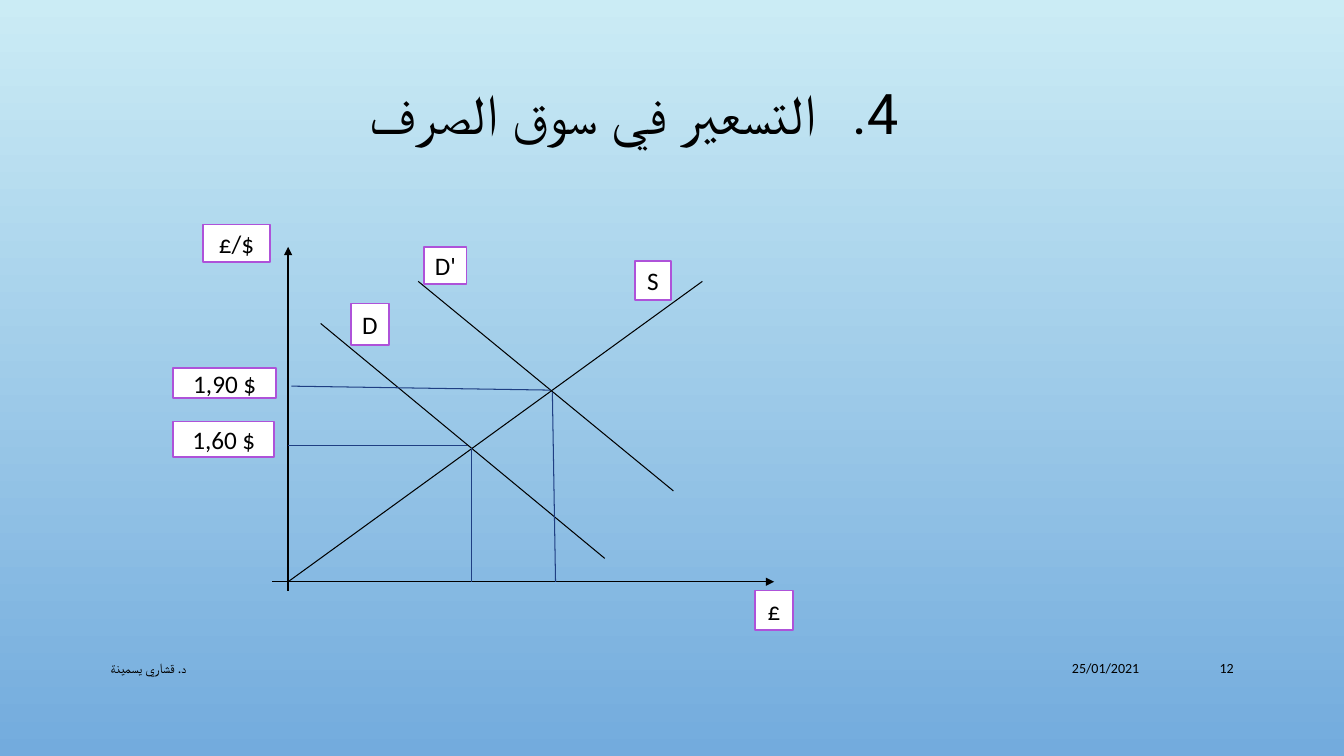
from lxml.etree import SubElement
from pptx import Presentation
from pptx.dml.color import RGBColor
from pptx.enum.dml import MSO_LINE
from pptx.enum.shapes import MSO_CONNECTOR, MSO_SHAPE
from pptx.enum.text import MSO_ANCHOR, PP_ALIGN
from pptx.oxml.ns import qn
from pptx.util import Cm, Pt


def color(value):
    return RGBColor.from_string(value)


class MarketSlide:
    ink, guide, border, paper = "000000", "1F3F83", "AE52D9", "FFFFFF"
    body_font, title_font = "Calibri", "Roboto"

    def __init__(self, presentation):
        self.slide = presentation.slides.add_slide(presentation.slide_layouts[6])

    def background(self, top, bottom):
        fill = self.slide.background.fill
        fill.gradient()
        fill.gradient_angle = 270
        for stop, value, position in zip(fill.gradient_stops, (top, bottom), (0, 1)):
            stop.color.rgb = color(value)
            stop.position = position

    def fill_frame(self, frame, text, size, align, font=body_font):
        frame.word_wrap = True
        frame.vertical_anchor = MSO_ANCHOR.MIDDLE
        paragraph = frame.paragraphs[0]
        paragraph.alignment = align
        run = paragraph.add_run()
        run.text = text
        run.font.size = Pt(size)
        run.font.name = font
        run.font.color.rgb = color(self.ink)
        SubElement(run.font._element, qn("a:cs")).set("typeface", font)
        return paragraph

    def text(self, box, text, size, align, font=body_font):
        frame = self.slide.shapes.add_textbox(*map(Cm, box)).text_frame
        return self.fill_frame(frame, text, size, align, font)

    def title(self, box, text, number):
        paragraph = self.text(box, text, 40, PP_ALIGN.CENTER, self.title_font)
        paragraph.line_spacing = 0.9
        properties = paragraph._p.get_or_add_pPr()
        indent = Cm(2.06)
        for key, value in (("marL", indent), ("indent", -indent), ("rtl", 1)):
            properties.set(key, str(value))
        SubElement(properties, qn("a:buFont")).set("typeface", self.title_font)
        bullet = SubElement(properties, qn("a:buAutoNum"))
        bullet.set("type", "arabicPeriod")
        bullet.set("startAt", str(number))

    def line(self, start, end, stroke=ink, width=0.75, arrow=False):
        connector = self.slide.shapes.add_connector(
            MSO_CONNECTOR.STRAIGHT, *map(Cm, start + end))
        connector.line.color.rgb = color(stroke)
        connector.line.width = Pt(width)
        connector.line.dash_style = MSO_LINE.SOLID
        properties = connector._element.spPr
        if arrow:
            SubElement(properties.find(qn("a:ln")), qn("a:tailEnd")).set("type", "triangle")
        SubElement(properties, qn("a:effectLst"))

    def label(self, text, box):
        shape = self.slide.shapes.add_shape(MSO_SHAPE.RECTANGLE, *map(Cm, box))
        shape.shadow.inherit = False
        shape.fill.solid()
        shape.fill.fore_color.rgb = color(self.paper)
        shape.line.color.rgb = color(self.border)
        shape.line.width = Pt(1.25)
        frame = shape.text_frame
        frame.margin_left = frame.margin_right = 0
        self.fill_frame(frame, text, 18, PP_ALIGN.CENTER)


def main():
    presentation = Presentation()
    presentation.slide_width, presentation.slide_height = Cm(33.87), Cm(19.05)
    market = MarketSlide(presentation)
    market.background("CBECF5", "73ABDD")
    market.title((1.9, 1.7, 28.15, 2.49), "التسعير في سوق الصرف", 4)

    # Axes
    origin_x, origin_y = 7.26, 14.66
    market.line((origin_x, 14.88), (origin_x, 6.22), width=1.25, arrow=True)
    market.line((6.86, origin_y), (19.51, origin_y), arrow=True)

    # Supply, demand and shifted demand
    curves = [
        ((origin_x, origin_y), (17.7, 7.09)),
        ((8.08, 8.15), (15.24, 14.07)),
        ((10.54, 7.09), (16.97, 12.37)),
    ]
    for start, end in curves:
        market.line(start, end)

    # Guides from each equilibrium to the axes
    guides = [
        ((11.89, 11.28), (11.89, origin_y)),
        ((11.76, 11.23), (origin_x, 11.23)),
        ((13.92, 9.88), (14, origin_y)),
        ((13.87, 9.83), (7.34, 9.73)),
    ]
    for start, end in guides:
        market.line(start, end, market.guide)

    # Labels of curves, axes and prices
    labels = {
        "D'": (10.69, 6.22, 1.07, 0.94),
        "D": (8.84, 7.65, 0.97, 1.04),
        "S": (16, 6.58, 0.91, 0.99),
        "£": (19.02, 14.88, 0.97, 0.99),
        "£/$": (5.11, 5.66, 1.7, 0.94),
        "1,90 $": (4.37, 9.27, 2.59, 0.76),
        "1,60 $": (4.37, 10.62, 2.54, 0.89),
    }
    for text, box in labels.items():
        market.label(text, box)

    # Footer
    footer = [
        ("25/01/2021", 21.34, 7.62, PP_ALIGN.RIGHT),
        ("د. قشاري يسمينة", 2.54, 18.54, PP_ALIGN.LEFT),
        ("12", 29.21, 2.13, PP_ALIGN.RIGHT),
    ]
    for text, left, width, align in footer:
        market.text((left, 16.33, width, 1.02), text, 10, align)

    presentation.save("out.pptx")


if __name__ == "__main__":
    main()
